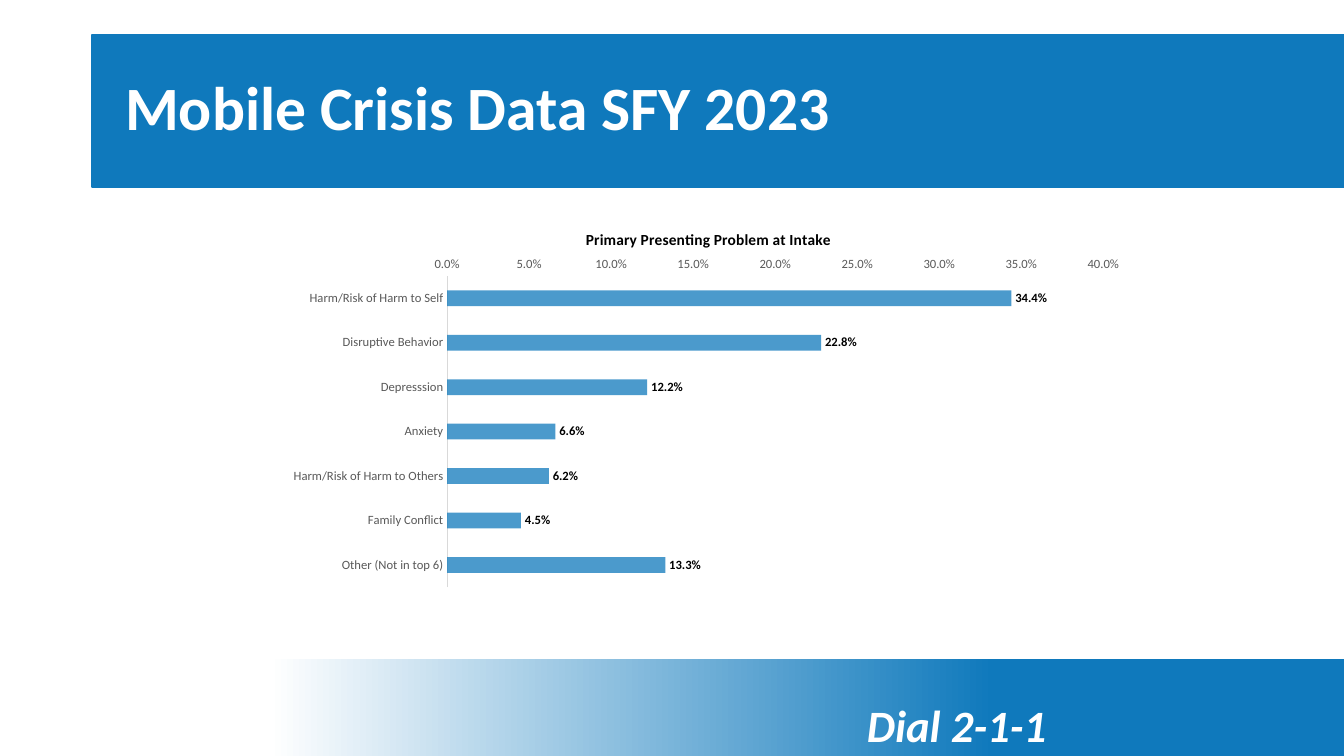
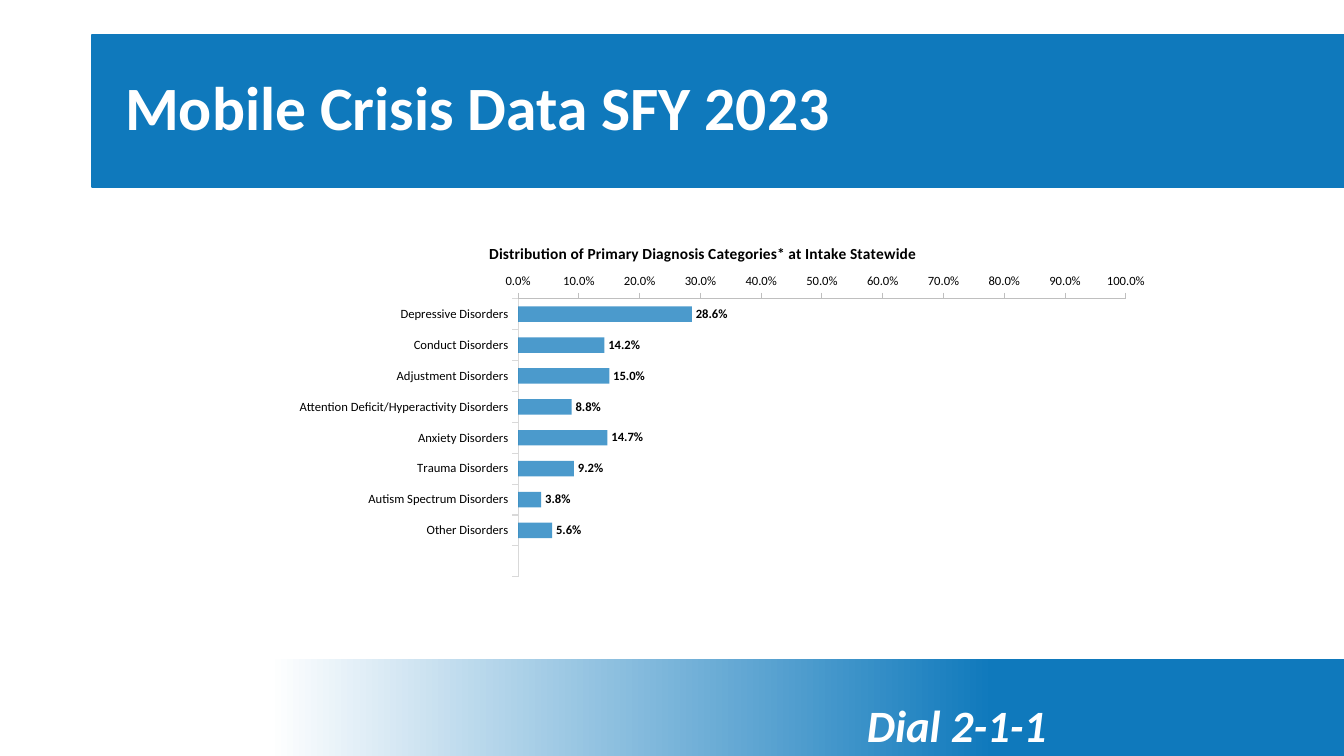
from dataclasses import dataclass

from pptx import Presentation
from pptx.chart.data import CategoryChartData
from pptx.dml.color import RGBColor as RGB
from pptx.enum.chart import XL_CHART_TYPE as ChartType
from pptx.enum.chart import XL_LABEL_POSITION as LabelPosition
from pptx.enum.chart import XL_TICK_MARK as Tick
from pptx.enum.shapes import MSO_SHAPE as Preset
from pptx.enum.text import MSO_ANCHOR as Anchor
from pptx.enum.text import PP_ALIGN as Align
from pptx.oxml import parse_xml
from pptx.oxml.ns import nsdecls, qn
from pptx.util import Emu, Pt

# Content: boxes are (left, top, width, height) in px
SLIDE_SIZE = (1344, 756)
TITLE_BOX = (115, 38, 1212, 146)
TITLE_BAND = (92, 35, 1252, 152)
FOOTER_BAND = (0, 659, 1344, 97)
FOOTER_BOX = (857, 693, 217, 62)
FOOTER_TEXT = "Dial 2-1-1"

SLIDES = [
    {
        "title": "Mobile Crisis Data SFY 2023",
        "heading": "Primary Presenting Problem at Intake",
        "heading_at": (583, 226),
        "box": (276, 209, 860, 386),
        "plot": (447, 276, 656, 311),
        "rows": [
            ("Harm/Risk of Harm to Self", 0.344),
            ("Disruptive Behavior", 0.228),
            ("Depresssion", 0.122),
            ("Anxiety", 0.066),
            ("Harm/Risk of Harm to Others", 0.062),
            ("Family Conflict", 0.045),
            ("Other (Not in top 6)", 0.133),
        ],
        "maximum": 0.4, "step": 0.05, "gap": 182,
        "tick": Tick.NONE, "label_color": "muted", "value_line": None,
    },
    {
        "title": "Mobile Crisis Data SFY 2023",
        "heading": "Distribution of Primary Diagnosis Categories* at Intake Statewide",
        "heading_at": (486, 240),
        "box": (233, 223, 935, 381),
        "plot": (518, 299, 608, 278),
        "rows": [
            ("Depressive Disorders", 0.286),
            ("Conduct Disorders", 0.142),
            ("Adjustment Disorders", 0.15),
            ("Attention Deficit/Hyperactivity Disorders", 0.088),
            ("Anxiety Disorders", 0.147),
            ("Trauma Disorders", 0.092),
            ("Autism Spectrum Disorders", 0.038),
            ("Other Disorders", 0.056),
            ("", None),
        ],
        "maximum": 1, "step": 0.1, "gap": 100,
        "tick": Tick.OUTSIDE, "label_color": "black", "value_line": "value_axis",
    },
]


@dataclass(frozen=True)
class Theme:
    font: str = "Calibri"
    blue: RGB = RGB(0x0F, 0x79, 0xBC)
    white: RGB = RGB(0xFF, 0xFF, 0xFF)
    black: RGB = RGB(0, 0, 0)
    muted: RGB = RGB(0x59, 0x59, 0x59)
    category_axis: RGB = RGB(0xD9, 0xD9, 0xD9)
    value_axis: RGB = RGB(0xBF, 0xBF, 0xBF)
    bar_opacity: int = 75
    title_size: int = 44
    footer_size: int = 32
    heading_size: int = 11
    chart_size: int = 10
    label_size: int = 9
    percent: str = "0.0%"


THEME = Theme()


def emu(*pixels):
    return [Emu(round(value * 914400 / 100.8)) for value in pixels]


def style_font(font, size, color, bold=False, italic=False):
    font.name, font.size = THEME.font, Pt(size)
    font.bold, font.italic = bold, italic
    font.color.rgb = color


def add_run(paragraph, text, size, color, bold=True, italic=False):
    run = paragraph.add_run()
    run.text = text
    style_font(run.font, size, color, bold, italic)


def add_band(slide, box):
    band = slide.shapes.add_shape(Preset.RECTANGLE, *emu(*box))
    band.shadow.inherit = False
    return band


# Shared frame: drawn once, then moved to the layout behind its placeholders
def build_frame(slide, layout):
    title_band = add_band(slide, TITLE_BAND)
    title_band.fill.solid()
    title_band.fill.fore_color.rgb = THEME.blue
    title_band.line.color.rgb = THEME.blue
    title_band.line.width = Pt(1)

    footer_band = add_band(slide, FOOTER_BAND)
    footer_band.line.fill.background()
    footer_band.fill.gradient()
    footer_band.fill.gradient_angle = 0
    stops = ((0.2, THEME.white), (0.74, THEME.blue))
    for stop, (position, color) in zip(footer_band.fill.gradient_stops, stops):
        stop.position = position
        stop.color.rgb = color

    footer = slide.shapes.add_textbox(*emu(*FOOTER_BOX))
    footer.text_frame.word_wrap = True
    add_run(footer.text_frame.paragraphs[0], FOOTER_TEXT,
            THEME.footer_size, THEME.white, italic=True)

    for index, shape in enumerate((title_band, footer_band, footer), start=2):
        layout.shapes.element.insert(index, shape.element)


def fill_title(slide, text):
    frame = slide.shapes.title.text_frame
    frame.vertical_anchor = Anchor.MIDDLE
    paragraph = frame.paragraphs[0]
    paragraph.alignment = Align.LEFT
    paragraph.line_spacing = 0.9
    add_run(paragraph, text, THEME.title_size, THEME.white)


# Chart parts are placed as fractions of the chart box
def place_part(element, index, box, part, target=""):
    for old in element.findall(qn("c:layout")):
        element.remove(old)
    fractions = [(part[0] - box[0]) / box[2], (part[1] - box[1]) / box[3]]
    fractions += [size / whole for size, whole in zip(part[2:], box[2:])]
    modes = "".join(f'<c:{axis}Mode val="edge"/>' for axis in "xy")
    values = "".join(f'<c:{name} val="{value:.3f}"/>'
                     for name, value in zip("xywh", fractions))
    element.insert(index, parse_xml(
        f'<c:layout {nsdecls("c")}><c:manualLayout>{target}{modes}{values}'
        "</c:manualLayout></c:layout>"))


def style_axis(axis, content, line_color):
    axis.has_major_gridlines = False
    axis.major_tick_mark = content["tick"]
    axis.minor_tick_mark = Tick.NONE
    style_font(axis.tick_labels.font, THEME.label_size,
               getattr(THEME, content["label_color"]))
    if line_color:
        axis.format.line.color.rgb = getattr(THEME, line_color)
        axis.format.line.width = Pt(0.75)
    else:
        axis.format.line.fill.background()


def add_bar_chart(slide, content):
    data = CategoryChartData(number_format=THEME.percent)
    data.categories = [name for name, _ in content["rows"]]
    data.add_series("Series 1", [value for _, value in content["rows"]])
    box = content["box"]
    chart = slide.shapes.add_chart(ChartType.BAR_CLUSTERED, *emu(*box), data).chart
    style_font(chart.font, THEME.chart_size, THEME.black)
    chart.has_legend = False

    # Heading and plot area
    chart.has_title = True
    add_run(chart.chart_title.text_frame.paragraphs[0], content["heading"],
            THEME.heading_size, THEME.black)
    chart.chart_title.include_in_layout = False
    place_part(chart.chart_title.element, 1, box, content["heading_at"])
    place_part(next(chart.element.iter(qn("c:plotArea"))), 0, box, content["plot"],
               '<c:layoutTarget val="inner"/>')

    # Axes
    style_axis(chart.category_axis, content, "category_axis")
    chart.category_axis.reverse_order = True
    value_axis = chart.value_axis
    style_axis(value_axis, content, content["value_line"])
    value_axis.minimum_scale, value_axis.maximum_scale = 0, content["maximum"]
    value_axis.major_unit = content["step"]
    value_axis.tick_labels.number_format = THEME.percent
    value_axis.tick_labels.number_format_is_linked = False

    # Bars and their labels
    plot = chart.plots[0]
    plot.gap_width = content["gap"]
    plot.vary_by_categories = False
    series = plot.series[0]
    series.format.fill.solid()
    series.format.fill.fore_color.rgb = THEME.blue
    bar_color = next(next(chart.element.iter(qn("c:ser"))).iter(qn("a:srgbClr")))
    bar_color.append(parse_xml(
        f'<a:alpha {nsdecls("a")} val="{THEME.bar_opacity * 1000}"/>'))
    labels = series.data_labels
    labels.show_value = True
    labels.position = LabelPosition.OUTSIDE_END
    labels.number_format = THEME.percent
    labels.number_format_is_linked = False
    style_font(labels.font, THEME.label_size, THEME.black, bold=True)


def main():
    presentation = Presentation()
    presentation.slide_width, presentation.slide_height = emu(*SLIDE_SIZE)
    layout = presentation.slide_layouts.get_by_name("Title Only")
    title = layout.placeholders[0]
    title.left, title.top, title.width, title.height = emu(*TITLE_BOX)

    slides = [presentation.slides.add_slide(layout) for _ in SLIDES]
    build_frame(slides[0], layout)
    for slide, content in zip(slides, SLIDES):
        fill_title(slide, content["title"])
        add_bar_chart(slide, content)
    presentation.save("out.pptx")


if __name__ == "__main__":
    main()
